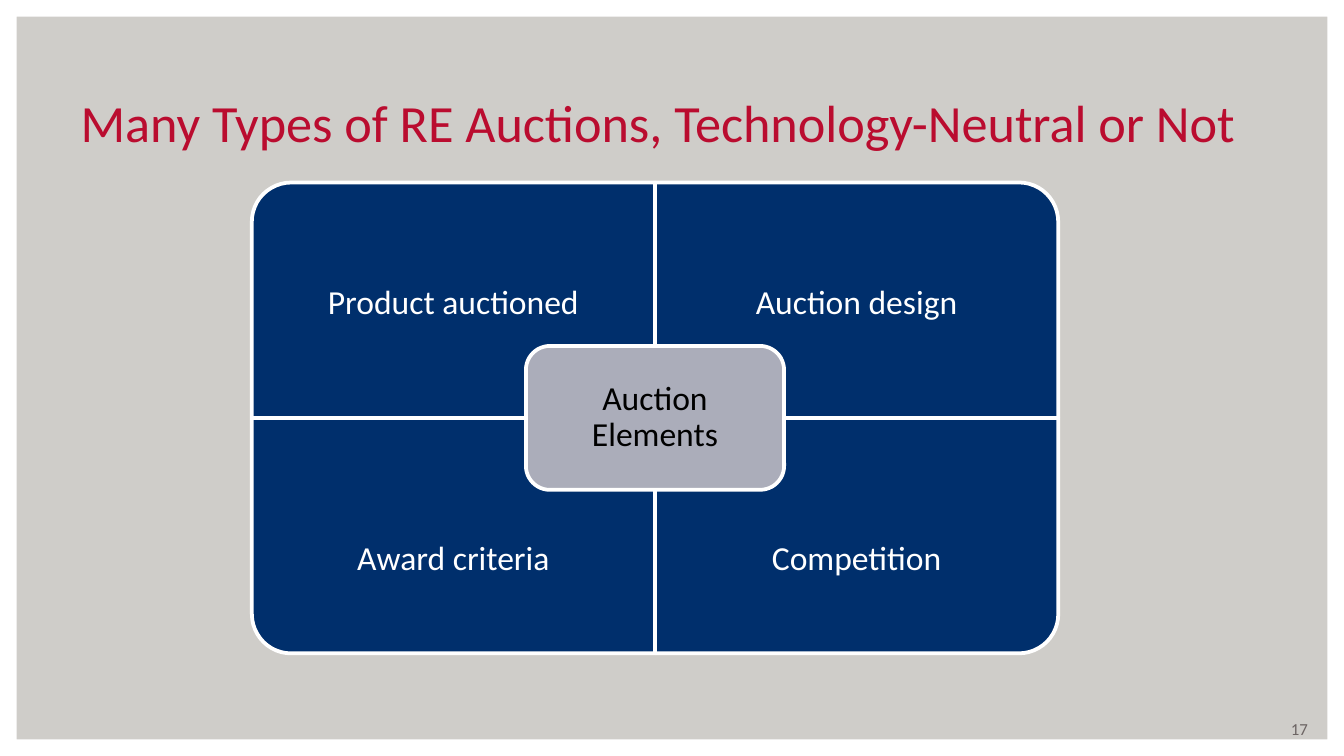
"""Build a slide on the four elements of renewable energy auctions."""
from dataclasses import dataclass

from pptx import Presentation
from pptx.dml.color import RGBColor
from pptx.enum.shapes import MSO_SHAPE
from pptx.enum.text import MSO_ANCHOR, MSO_AUTO_SIZE, PP_ALIGN
from pptx.util import Cm, Pt

FRAME = MSO_SHAPE.FRAME
ROUND_ONE = MSO_SHAPE.ROUND_1_RECTANGLE
ROUNDED = MSO_SHAPE.ROUNDED_RECTANGLE
TOP, MIDDLE = MSO_ANCHOR.TOP, MSO_ANCHOR.MIDDLE
LEFT, CENTER, RIGHT = PP_ALIGN.LEFT, PP_ALIGN.CENTER, PP_ALIGN.RIGHT

FONT = "Calibri"
WHITE, BLACK, NAVY, RED = "FFFFFF", "000000", "002F6C", "BA0C2F"
BACKDROP, SILVER, GREY = "CFCDC9", "ABADBA", "6C6463"

SLIDE_W, SLIDE_H = 25.4, 14.29
MATRIX_X, MATRIX_Y = 12.38, 7.9
QUADRANT_W, QUADRANT_H = 7.62, 4.45
LABEL_H = 3.33
CORE_W, CORE_H = 4.88, 2.72


@dataclass(frozen=True)
class Quadrant:
    """One quarter of the matrix and the place of its label."""
    label: str
    column: int
    row: int
    rotation: int
    anchor: MSO_ANCHOR
    spacing: float


QUADRANTS = [
    Quadrant("Product auctioned", 0, 0, 270, MIDDLE, 2.5),
    Quadrant("Auction design", 1, 0, 0, MIDDLE, 2.5),
    Quadrant("Award criteria", 0, 1, 180, TOP, 2),
    Quadrant("Competition", 1, 1, 90, TOP, 2),
]


def rgb(color: str) -> RGBColor:
    """Turn a hex string into a colour."""
    return RGBColor.from_string(color)


def write(shape, text: str, size: float, color: str, align: PP_ALIGN,
          anchor: MSO_ANCHOR = MIDDLE, spacing: float = 1) -> None:
    """Put one formatted paragraph into a shape."""
    frame = shape.text_frame
    frame.text = text
    frame.word_wrap = True
    frame.auto_size = MSO_AUTO_SIZE.NONE
    frame.vertical_anchor = anchor
    paragraph = frame.paragraphs[0]
    paragraph.alignment = align
    paragraph.line_spacing = spacing
    font = paragraph.runs[0].font
    font.name, font.size = FONT, Pt(size)
    font.color.rgb = rgb(color)


def set_margins(shape, margin: float) -> None:
    """Give a shape equal text margins on all sides."""
    frame = shape.text_frame
    frame.margin_left = frame.margin_right = Cm(margin)
    frame.margin_top = frame.margin_bottom = Cm(margin)


def add_block(slide, kind: MSO_SHAPE, center_x: float, center_y: float,
              width: float, height: float, fill: str):
    """Add a filled shape with a white outline around a centre."""
    block = slide.shapes.add_shape(
        kind, Cm(center_x - width / 2), Cm(center_y - height / 2),
        Cm(width), Cm(height))
    block.shadow.inherit = False
    block.fill.solid()
    block.fill.fore_color.rgb = rgb(fill)
    block.line.color.rgb = rgb(WHITE)
    block.line.width = Pt(2)
    return block


def add_quadrant(slide, quadrant: Quadrant) -> None:
    """Draw one quarter with its label against the outer edge."""
    left = MATRIX_X + (quadrant.column - 1) * QUADRANT_W
    top = MATRIX_Y + (quadrant.row - 1) * QUADRANT_H
    width, height = QUADRANT_W, QUADRANT_H
    if quadrant.rotation % 180:
        width, height = height, width
    block = add_block(slide, ROUND_ONE, left + QUADRANT_W / 2,
                      top + QUADRANT_H / 2, width, height, NAVY)
    block.rotation = quadrant.rotation
    label_top = top + quadrant.row * (QUADRANT_H - LABEL_H)
    label = slide.shapes.add_textbox(
        Cm(left), Cm(label_top), Cm(QUADRANT_W), Cm(LABEL_H))
    write(label, quadrant.label, 18, WHITE, CENTER,
          quadrant.anchor, quadrant.spacing)
    set_margins(label, 0.36)


def main() -> None:
    """Assemble and save the slide."""
    deck = Presentation()
    deck.slide_width, deck.slide_height = Cm(SLIDE_W), Cm(SLIDE_H)
    slide = deck.slides.add_slide(deck.slide_layouts[5])
    slide.background.fill.solid()
    slide.background.fill.fore_color.rgb = rgb(BACKDROP)

    border = add_block(slide, FRAME, SLIDE_W / 2, SLIDE_H / 2,
                       SLIDE_W, SLIDE_H, WHITE)
    border.adjustments[0] = 0.022
    border.line.fill.background()

    title = slide.shapes.title
    title.left, title.top = Cm(1.27), Cm(1.5)
    title.width, title.height = Cm(23.7), Cm(2.31)
    write(title, "Many Types of RE Auctions, Technology-Neutral or Not",
          28, RED, LEFT, TOP)
    title.text_frame.margin_top = Cm(0.2)

    for quadrant in QUADRANTS:
        add_quadrant(slide, quadrant)

    core = add_block(slide, ROUNDED, MATRIX_X, MATRIX_Y,
                     CORE_W, CORE_H, SILVER)
    write(core, "Auction Elements", 18, BLACK, CENTER, spacing=0.9)
    set_margins(core, 0.33)

    page_number = slide.shapes.add_textbox(
        Cm(19.05), Cm(13.46), Cm(5.92), Cm(0.64))
    write(page_number, "17", 9, GREY, RIGHT)

    deck.save("out.pptx")


if __name__ == "__main__":
    main()
